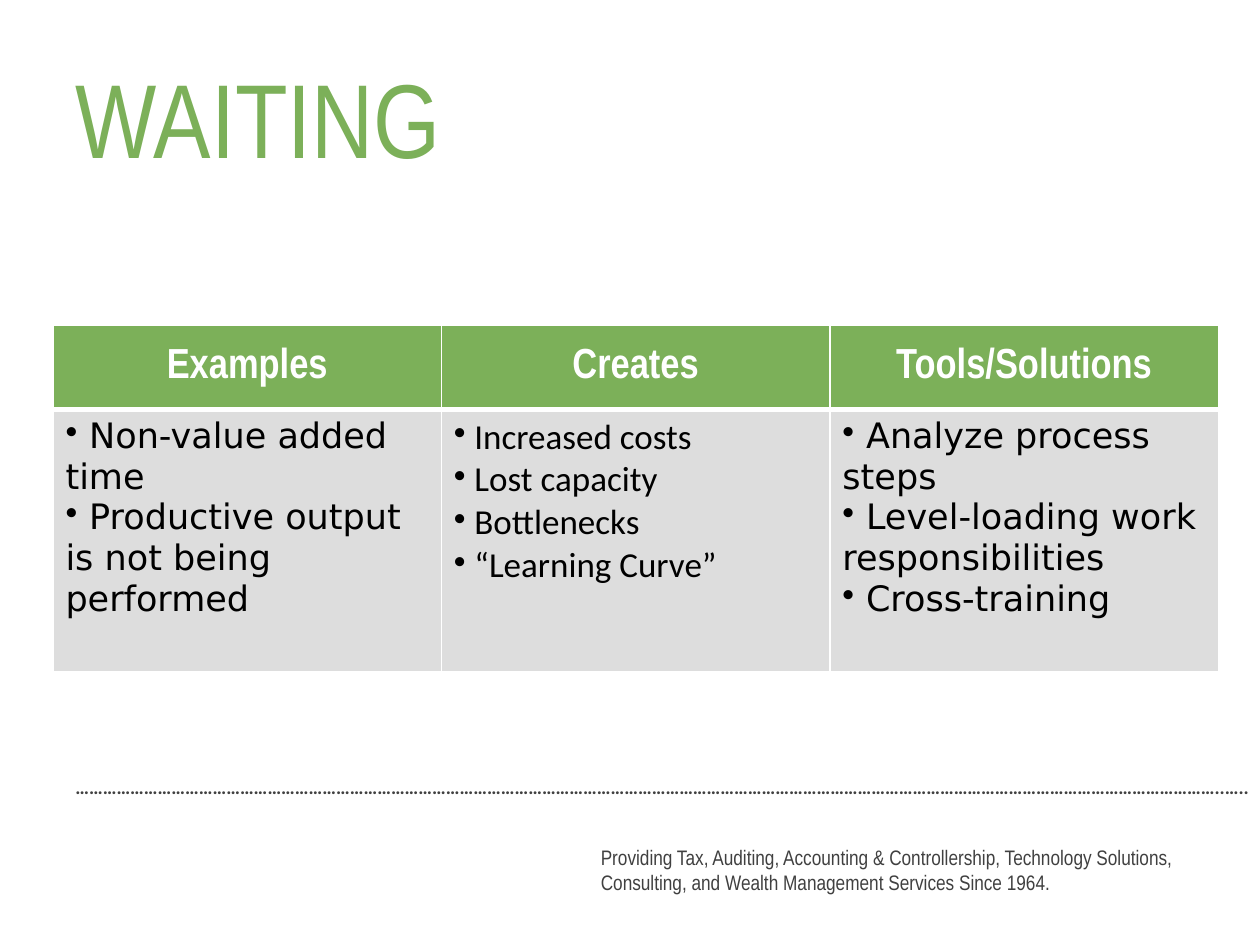
from lxml import etree
from pptx import Presentation
from pptx.dml.color import RGBColor
from pptx.enum.text import MSO_ANCHOR, PP_ALIGN
from pptx.oxml.ns import qn
from pptx.util import Inches, Pt

LEFT, CENTER = PP_ALIGN.LEFT, PP_ALIGN.CENTER
MIDDLE, TOP = MSO_ANCHOR.MIDDLE, MSO_ANCHOR.TOP
COLORS = {"green": "7CB059", "gray": "DDDDDD", "white": "FFFFFF",
          "black": "000000", "footer": "404040"}
NARROW = "Arial Narrow"


def style_text(para, size, font, color, bold=False, align=LEFT):
    para.alignment = align
    for span in para.runs:
        span.font.size = Pt(size)
        span.font.name = font
        span.font.bold = bold
        span.font.color.rgb = RGBColor.from_string(COLORS[color])


def style_cell(cell, color, borders):
    cell.fill.solid()
    cell.fill.fore_color.rgb = RGBColor.from_string(COLORS[color])
    properties = cell._tc.get_or_add_tcPr()
    for index, (side, width) in enumerate(borders.items()):
        line = etree.Element(qn(f"a:ln{side}"), w=str(Pt(width)))
        fill = etree.SubElement(line, qn("a:solidFill"))
        etree.SubElement(fill, qn("a:srgbClr"), val=COLORS["white"])
        properties.insert(index, line)


deck = Presentation()
deck.slide_width, deck.slide_height = Inches(10), Inches(7.5)
page = deck.slides.add_slide(deck.slide_layouts[5])

footer_texts = [
    ("……………………………………………………………………………………………………………………………………………………………………………………………………………………………..…..",
     (0.5, 6.1, 9.67, 0.29), 11, "Calibri", True, TOP),
    ("Providing Tax, Auditing, Accounting & Controllership, Technology Solutions, "
     "Consulting, and Wealth Management Services Since 1964.",
     (4.67, 6.53, 5.17, 0.74), 12, NARROW, False, MIDDLE),
]
for text, place, size, font, bold, anchor in footer_texts:
    box = page.shapes.add_textbox(*[Inches(length) for length in place])
    frame = box.text_frame
    frame.word_wrap = True
    frame.vertical_anchor = anchor
    frame.text = text
    style_text(frame.paragraphs[0], size, font, "footer", bold)

columns = [
    ("Examples", "DejaVu Sans",
     ["Non-value added time", "Productive output is not being performed"]),
    ("Creates", "Calibri",
     ["Increased costs", "Lost capacity", "Bottlenecks", "“Learning Curve”"]),
    ("Tools/Solutions", "DejaVu Sans",
     ["Analyze process steps", "Level-loading work responsibilities", "Cross-training"]),
]
table = page.shapes.add_table(2, len(columns), Inches(0.42), Inches(2.58),
                              Inches(9.25), Inches(2.75)).table
table.rows[0].height, table.rows[1].height = Inches(0.67), Inches(2.08)

for index, (heading, font, items) in enumerate(columns):
    header = table.cell(0, index)
    header.text = heading
    header.vertical_anchor = MIDDLE
    style_text(header.text_frame.paragraphs[0], 24, NARROW, "white", True, CENTER)
    style_cell(header, "green", {"L": 1, "R": 1, "T": 1, "B": 3})

    body = table.cell(1, index)
    body.text = "\n".join(f" {item}" for item in items)
    body.vertical_anchor = TOP
    for para in body.text_frame.paragraphs:
        etree.SubElement(para._p.get_or_add_pPr(), qn("a:buChar"), char="•")
        style_text(para, 20, font, "black")
    style_cell(body, "gray", {"L": 1, "R": 1, "T": 3, "B": 1})

title = page.shapes.title
title.left, title.top = Inches(0.5), Inches(0.3)
title.width, title.height = Inches(9), Inches(1.25)
title.text_frame.text = "WAITING"
title.text_frame.vertical_anchor = MIDDLE
style_text(title.text_frame.paragraphs[0], 60, NARROW, "green")

deck.save("out.pptx")
